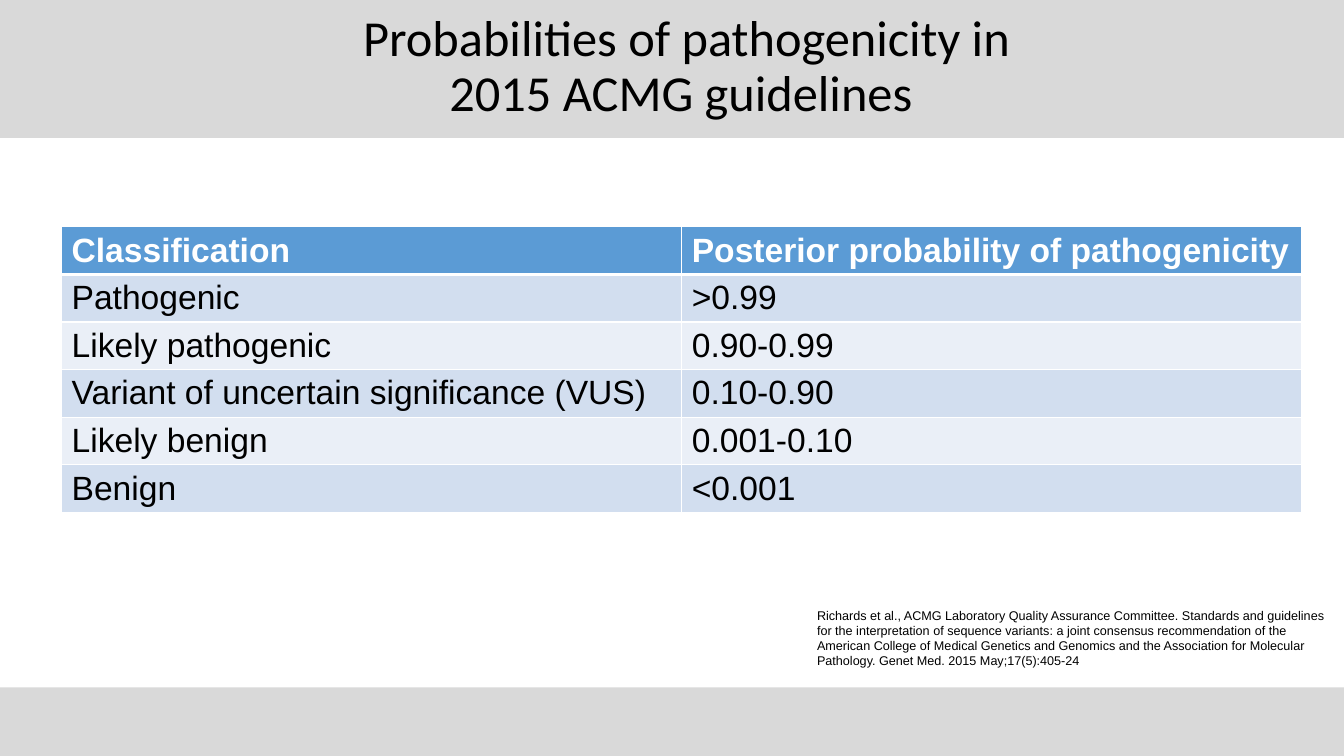
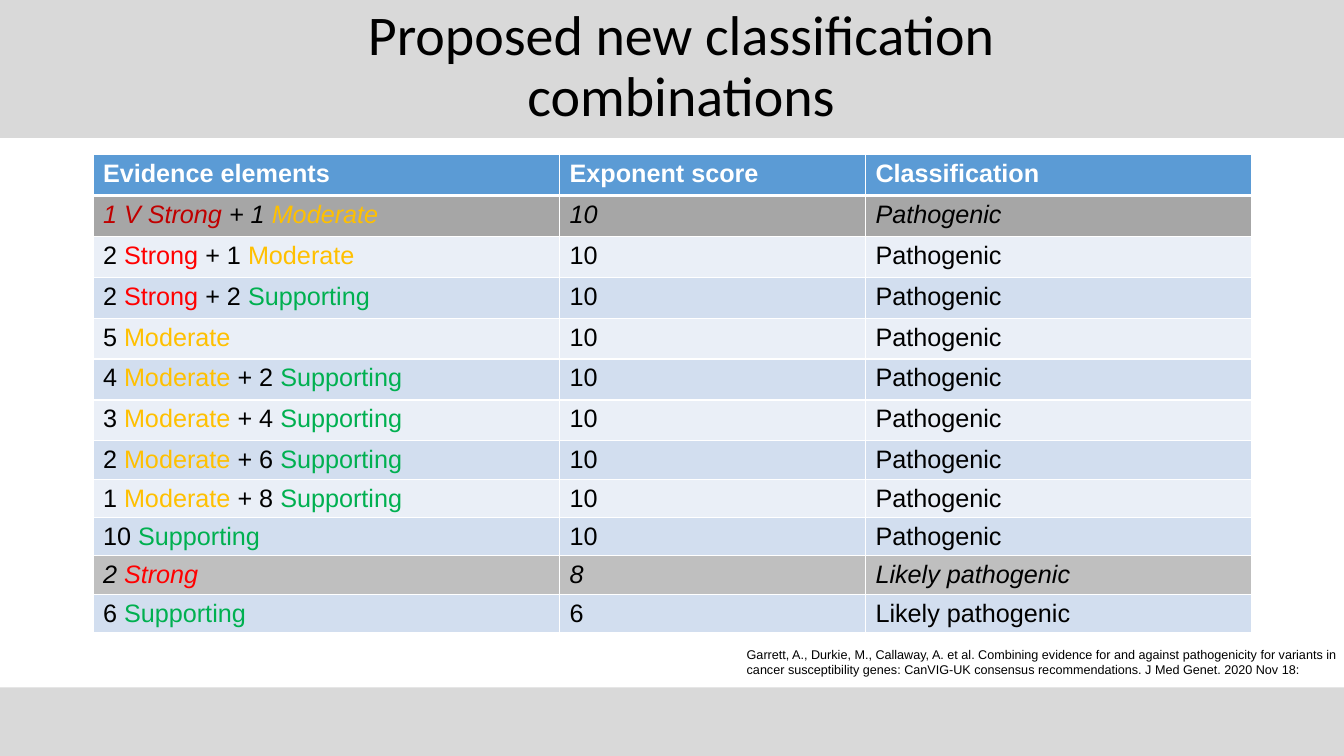
from dataclasses import dataclass

from lxml import etree
from pptx import Presentation
from pptx.dml.color import RGBColor
from pptx.enum.shapes import MSO_SHAPE
from pptx.enum.text import MSO_ANCHOR, MSO_AUTO_SIZE, PP_ALIGN
from pptx.oxml.ns import qn
from pptx.util import Pt

RECTANGLE = MSO_SHAPE.RECTANGLE
MIDDLE = MSO_ANCHOR.MIDDLE
CENTER = PP_ALIGN.CENTER
NO_AUTOFIT = MSO_AUTO_SIZE.NONE

SLIDE_WIDTH, SLIDE_HEIGHT = 960, 540
TOP_BAND, BOTTOM_BAND = 98.6, 49


@dataclass(frozen=True)
class Theme:
    title_font: str = "Calibri"
    body_font: str = "Arial"
    text: str = "000000"
    white: str = "FFFFFF"
    band: str = "D9D9D9"
    header: str = "5B9BD5"
    stripes: tuple = ("D2DEEF", "EAEFF7")
    dark_grey: str = "A6A6A6"
    light_grey: str = "BFBFBF"
    very_strong: str = "C00000"
    strong: str = "FF0000"
    moderate: str = "FFC000"
    supporting: str = "00B050"
    large_table_size: int = 24
    table_size: int = 18
    citation_size: int = 9


THEME = Theme()

STRENGTH_COLORS = {
    "V Strong": THEME.very_strong,
    "Strong": THEME.strong,
    "Moderate": THEME.moderate,
    "Supporting": THEME.supporting,
}

PROBABILITIES = [
    ("Classification", "Posterior probability of pathogenicity"),
    ("Pathogenic", ">0.99"),
    ("Likely pathogenic", "0.90-0.99"),
    ("Variant of uncertain significance (VUS)", "0.10-0.90"),
    ("Likely benign", "0.001-0.10"),
    ("Benign", "<0.001"),
]

COMBINATIONS = [
    ("Evidence elements", "Exponent score", "Classification"),
    ([(1, "V Strong"), (1, "Moderate")], "10", "Pathogenic"),
    ([(2, "Strong"), (1, "Moderate")], "10", "Pathogenic"),
    ([(2, "Strong"), (2, "Supporting")], "10", "Pathogenic"),
    ([(5, "Moderate")], "10", "Pathogenic"),
    ([(4, "Moderate"), (2, "Supporting")], "10", "Pathogenic"),
    ([(3, "Moderate"), (4, "Supporting")], "10", "Pathogenic"),
    ([(2, "Moderate"), (6, "Supporting")], "10", "Pathogenic"),
    ([(1, "Moderate"), (8, "Supporting")], "10", "Pathogenic"),
    ([(10, "Supporting")], "10", "Pathogenic"),
    ([(2, "Strong")], "8", "Likely pathogenic"),
    ([(6, "Supporting")], "6", "Likely pathogenic"),
]
EXISTING_RULES = {1: THEME.dark_grey, 10: THEME.light_grey}

RICHARDS = (
    "Richards et al., ACMG Laboratory Quality Assurance Committee. Standards and "
    "guidelines for the interpretation of sequence variants: a joint consensus "
    "recommendation of the American College of Medical Genetics and Genomics and "
    "the Association for Molecular Pathology. Genet Med. 2015 May;17(5):405-24"
)
GARRETT = (
    "Garrett, A., Durkie, M., Callaway, A. et al. Combining evidence for and against "
    "pathogenicity for variants in cancer susceptibility genes: CanVIG-UK consensus "
    "recommendations. J Med Genet. 2020 Nov 18:"
)


def write(paragraph, text, *, size, color=THEME.text, font=THEME.body_font,
          bold=False, italic=False):
    """Append one formatted run to the paragraph."""
    run = paragraph.add_run()
    run.text = text
    run.font.name = font
    run.font.size = Pt(size)
    run.font.bold = bold
    run.font.italic = italic
    run.font.color.rgb = RGBColor.from_string(color)


def write_evidence(paragraph, evidence, **style):
    """Write counted evidence, each strength in its own colour."""
    for position, (count, strength) in enumerate(evidence):
        color = STRENGTH_COLORS[strength]
        if position:
            write(paragraph, " + ", **style)
        count_color = color if strength == "V Strong" else THEME.text
        write(paragraph, f"{count} ", color=count_color, **style)
        write(paragraph, strength, color=color, **style)


def add_bands(layout, slide):
    """Draw the grey bands and move them to the back of the shared layout."""
    bands = [(0, TOP_BAND), (SLIDE_HEIGHT - BOTTOM_BAND, BOTTOM_BAND)]
    for number, (top, height) in enumerate(bands):
        band = slide.shapes.add_shape(
            RECTANGLE, 0, Pt(top), Pt(SLIDE_WIDTH), Pt(height))
        band.shadow.inherit = False
        band.fill.solid()
        band.fill.fore_color.rgb = RGBColor.from_string(THEME.band)
        band.line.fill.background()
        band.element.nvSpPr.cNvPr.set("id", str(100 + number))
        layout.shapes.element.insert(2 + number, band.element)


def add_title(slide, text, size):
    title = slide.shapes.title
    title.left, title.top, title.width, title.height = map(Pt, (206, 0, 561, 97))
    frame = title.text_frame
    frame.auto_size = NO_AUTOFIT
    frame.word_wrap = True
    frame.vertical_anchor = MIDDLE
    heading = frame.paragraphs[0]
    heading.alignment = CENTER
    heading.line_spacing = 0.9
    write(heading, text, size=size, font=THEME.title_font)


def set_borders(cell, top, bottom):
    properties = cell._tc.get_or_add_tcPr()
    for side, width in (("L", 1), ("R", 1), ("T", top), ("B", bottom)):
        line = etree.SubElement(properties, qn(f"a:ln{side}"), w=str(Pt(width)))
        fill = etree.SubElement(line, qn("a:solidFill"))
        etree.SubElement(fill, qn("a:srgbClr"), val=THEME.white)


def add_banded_table(slide, rows, left, top, widths, heights, size, highlights=None):
    """Add a striped table; highlights maps row numbers to fills of italic rows."""
    highlights = highlights or {}
    table = slide.shapes.add_table(
        len(rows), len(widths), Pt(left), Pt(top),
        Pt(sum(widths)), Pt(sum(heights))).table
    for column, width in zip(table.columns, widths):
        column.width = Pt(width)
    for number, (row, height) in enumerate(zip(rows, heights)):
        table.rows[number].height = Pt(height)
        is_header = number == 0
        stripe = THEME.header if is_header else THEME.stripes[(number - 1) % 2]
        for cell, content in zip(table.rows[number].cells, row):
            set_borders(cell, top=3 if number == 1 else 1, bottom=3 if is_header else 1)
            cell.fill.solid()
            cell.fill.fore_color.rgb = RGBColor.from_string(
                highlights.get(number, stripe))
            paragraph = cell.text_frame.paragraphs[0]
            style = {"size": size, "bold": is_header, "italic": number in highlights}
            if isinstance(content, list):
                write_evidence(paragraph, content, **style)
            else:
                color = THEME.white if is_header else THEME.text
                write(paragraph, content, color=color, **style)


def add_citation(slide, text, left, top, height):
    """Add a source reference reaching to the right edge of the slide."""
    citation = slide.shapes.add_textbox(
        Pt(left), Pt(top), Pt(SLIDE_WIDTH - left), Pt(height))
    frame = citation.text_frame
    frame.word_wrap = True
    frame.margin_right = Pt(3)
    write(frame.paragraphs[0], text, size=THEME.citation_size)


def main():
    deck = Presentation()
    deck.slide_width, deck.slide_height = Pt(SLIDE_WIDTH), Pt(SLIDE_HEIGHT)
    layout = deck.slide_layouts.get_by_name("Title Only")

    guidelines = deck.slides.add_slide(layout)
    add_bands(layout, guidelines)
    add_title(guidelines, " Probabilities of pathogenicity in 2015 ACMG guidelines", 36)
    add_banded_table(guidelines, PROBABILITIES, 44, 162, [443, 443],
                     [34] * len(PROBABILITIES), THEME.large_table_size)
    add_citation(guidelines, RICHARDS, 576.5, 430.5, 51)

    proposal = deck.slides.add_slide(layout)
    add_title(proposal, "Proposed new classification combinations", 40)
    add_banded_table(proposal, COMBINATIONS, 66.4, 110.5, [333.3, 218.5, 275.7],
                     [29.2] * 7 + [27.3] * 5, THEME.table_size, EXISTING_RULES)
    add_citation(proposal, GARRETT, 526.3, 458.6, 29)

    deck.save("out.pptx")


if __name__ == "__main__":
    main()
